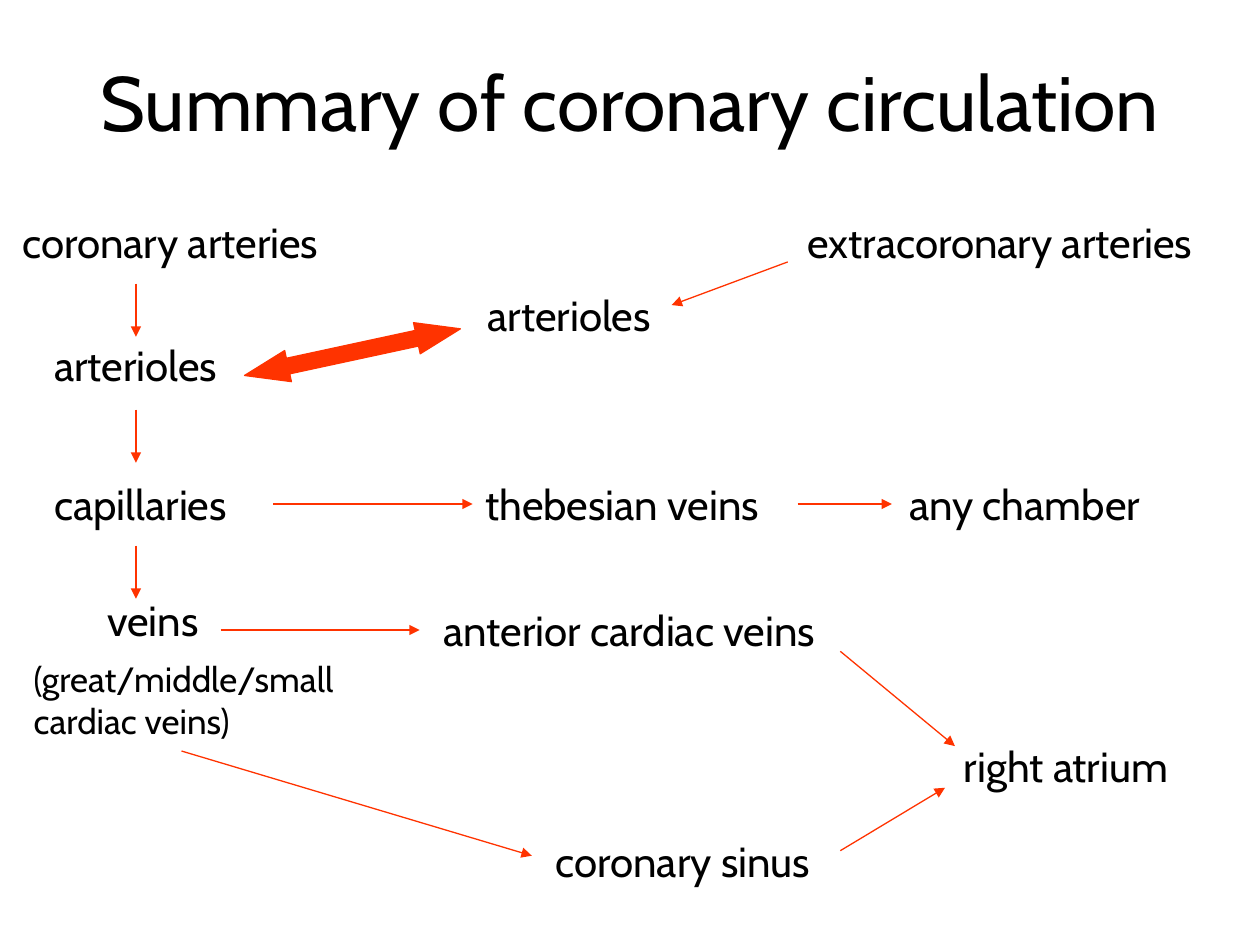
from lxml.etree import SubElement
from pptx import Presentation
from pptx.dml.color import RGBColor
from pptx.enum.shapes import MSO_CONNECTOR as Connector, MSO_SHAPE as Shape
from pptx.enum.text import MSO_ANCHOR as Anchor, MSO_AUTO_SIZE as AutoSize, PP_ALIGN as Align
from pptx.oxml.ns import qn
from pptx.util import Cm, Pt

BLACK, RED = "000000", "FF3300"
TITLE = "Summary of coronary circulation"
TITLE_AREA = (1.27, 0.43, 22.86, 3.18)
LABEL_HEIGHT = 1.27

LABELS = [
    ("coronary arteries", 0.2, 4.24, 6.83),
    ("extracoronary arteries", 16.03, 4.24, 8.74),
    ("arterioles", 9.58, 5.72, 3.96),
    ("arterioles", 0.84, 6.71, 3.96),
    ("capillaries", 0.84, 9.53, 4.17),
    ("thebesian veins", 9.53, 9.53, 6.55),
    ("any chamber", 18.08, 9.53, 5.61),
    ("veins", 1.91, 11.86, 2.41),
    ("anterior cardiac veins", 8.69, 12.07, 8.76),
    ("right atrium", 19.18, 14.81, 5.16),
    ("coronary sinus", 10.95, 16.71, 6.2),
]
VEIN_TYPES = "(great/middle/small\ncardiac veins)"
VEIN_TYPES_AREA = (0.43, 13.13, 6.83, 1.96)

DOWN_X, DOWN_LENGTH = 2.74, 1.07
DOWN_STARTS = [5.72, 8.26, 11]
FLOWS = [
    (15.88, 5.28, 13.54, 6.15),
    (5.51, 10.16, 9.53, 10.16),
    (16.08, 10.16, 17.98, 10.16),
    (4.45, 12.7, 8.46, 12.7),
    (3.66, 15.14, 10.72, 17.25),
    (16.94, 17.15, 19.05, 15.88),
    (16.94, 13.13, 19.25, 15.04),
]
ANASTOMOSIS_AREA = (4.88, 6.78, 4.45, 0.64)


def lengths(values):
    return [Cm(value) for value in values]


def paint(color, value):
    color.rgb = RGBColor.from_string(value)


def write(box, text, size, align, frame_format):
    frame = box.text_frame
    for name, value in frame_format.items():
        setattr(frame, name, value)
    frame.text = text
    for para in frame.paragraphs:
        para.alignment = align
        for span in para.runs:
            for name, value in {"name": "Cabin", "size": Pt(size)}.items():
                setattr(span.font, name, value)
            paint(span.font.color, BLACK)


def add_label(page, text, area, size):
    box = page.shapes.add_textbox(*lengths(area))
    write(box, text, size, Align.LEFT,
          {"word_wrap": False, "auto_size": AutoSize.SHAPE_TO_FIT_TEXT})


def add_flow(page, ends):
    arrow = page.shapes.add_connector(Connector.STRAIGHT, *lengths(ends))
    arrow.line.width = Pt(0.75)
    paint(arrow.line.color, RED)
    properties = arrow.element.spPr
    SubElement(properties.find(qn("a:ln")), qn("a:tailEnd"), type="triangle")
    SubElement(properties, qn("a:effectLst"))


def add_anastomosis(page):
    arrow = page.shapes.add_shape(Shape.LEFT_RIGHT_ARROW, *lengths(ANASTOMOSIS_AREA))
    arrow.adjustments[0], arrow.adjustments[1] = 0.5, 1.4
    arrow.rotation = 347.8
    arrow.shadow.inherit = False
    arrow.fill.solid()
    paint(arrow.fill.fore_color, RED)
    arrow.line.width = Pt(0.75)
    paint(arrow.line.color, RED)


def main():
    deck = Presentation()
    deck.slide_width, deck.slide_height = Cm(25.4), Cm(19.05)
    page = deck.slides.add_slide(deck.slide_layouts[5])
    title = page.shapes.title
    title.left, title.top, title.width, title.height = lengths(TITLE_AREA)
    write(title, TITLE, 44, Align.CENTER,
          {"word_wrap": True, "auto_size": AutoSize.NONE, "vertical_anchor": Anchor.MIDDLE})

    for text, *corner_and_width in LABELS:
        add_label(page, text, (*corner_and_width, LABEL_HEIGHT), 24)
    add_label(page, VEIN_TYPES, VEIN_TYPES_AREA, 20)

    downward = [(DOWN_X, start, DOWN_X, start + DOWN_LENGTH) for start in DOWN_STARTS]
    for ends in downward + FLOWS:
        add_flow(page, ends)
    add_anastomosis(page)
    deck.save("out.pptx")


if __name__ == "__main__":
    main()
